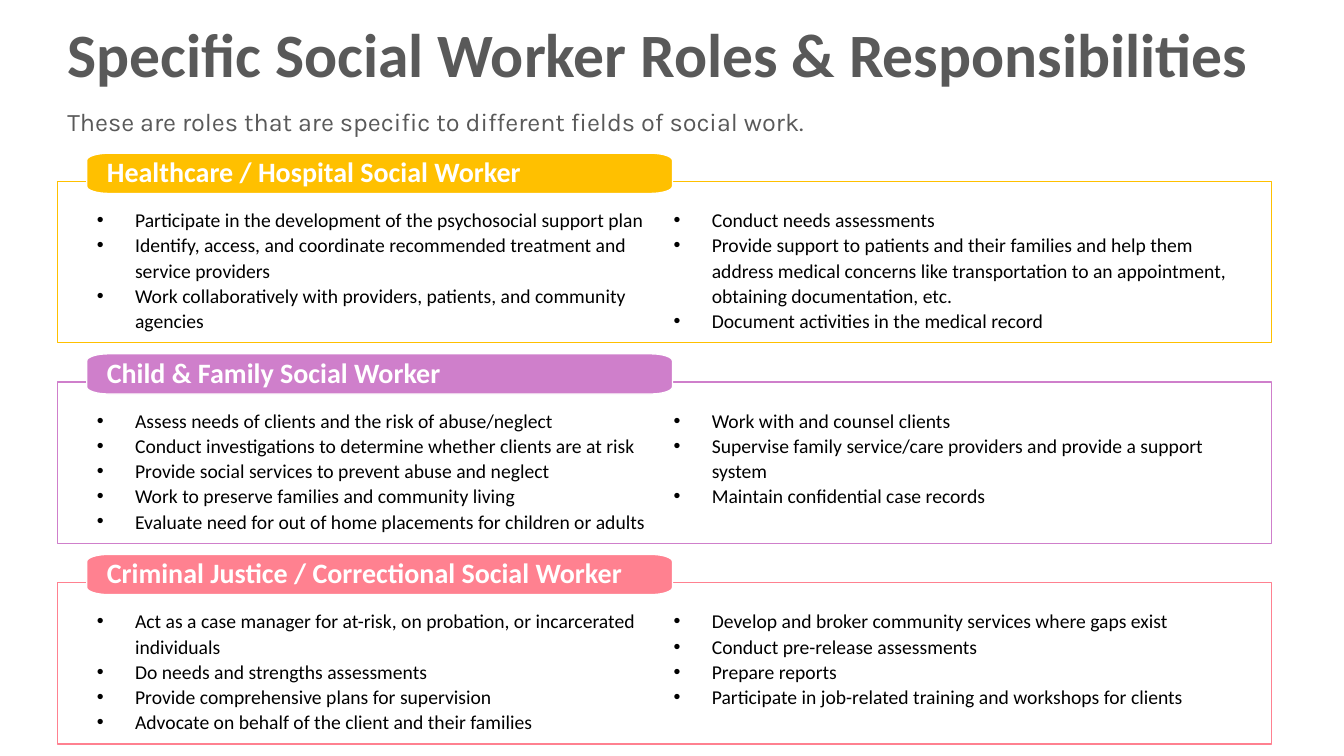
from math import cos, pi, sin

from lxml import etree
from pptx import Presentation
from pptx.dml import color
from pptx.enum import shapes, text
from pptx.oxml import ns
from pptx.util import Inches, Pt

RGB = color.RGBColor
GRAY = RGB(0x59, 0x59, 0x59)
BLACK = RGB(0, 0, 0)
WHITE = RGB(0xFF, 0xFF, 0xFF)
GOLD = RGB(0xFF, 0xC0, 0x00)
PURPLE = RGB(0xCF, 0x7F, 0xCB)
PINK = RGB(0xFF, 0x81, 0x90)

TOP = 1.52
PITCH = 1.99

FIELDS = [
    ("Healthcare / Hospital Social Worker", GOLD, [
        ["Participate in the development of the psychosocial support plan",
         "Identify, access, and coordinate recommended treatment and service providers",
         "Work collaboratively with providers, patients, and community agencies"],
        ["Conduct needs assessments",
         "Provide support to patients and their families and help them address medical "
         "concerns like transportation to an appointment, obtaining documentation, etc.",
         "Document activities in the medical record"],
    ]),
    ("Child & Family Social Worker", PURPLE, [
        ["Assess needs of clients and the risk of abuse/neglect",
         "Conduct investigations to determine whether clients are at risk",
         "Provide social services to prevent abuse and neglect",
         "Work to preserve families and community living",
         "Evaluate need for out of home placements for children or adults"],
        ["Work with and counsel clients",
         "Supervise family service/care providers and provide a support system",
         "Maintain confidential case records"],
    ]),
    ("Criminal Justice / Correctional Social Worker", PINK, [
        ["Act as a case manager for at-risk, on probation, or incarcerated individuals",
         "Do needs and strengths assessments",
         "Provide comprehensive plans for supervision",
         "Advocate on behalf of the client and their families"],
        ["Develop and broker community services where gaps exist",
         "Conduct pre-release assessments",
         "Prepare reports",
         "Participate in job-related training and workshops for clients"],
    ]),
]


def style(para, size, tint, bold=False, face="Calibri", space=1.0):
    para.alignment = text.PP_ALIGN.LEFT
    para.line_spacing = space
    for run in para.runs:
        run.font.name = face
        run.font.size = Pt(size)
        run.font.bold = bold
        run.font.color.rgb = tint


def paint(shape, fill, line):
    shape.shadow.inherit = False
    shape.fill.solid()
    shape.fill.fore_color.rgb = fill
    shape.line.color.rgb = line
    shape.line.width = Pt(1)


def add_box(parent, left, top, width, height, words):
    box = parent.add_textbox(Inches(left), Inches(top), Inches(width), Inches(height))
    box.text_frame.word_wrap = True
    box.text_frame.text = words
    return box.text_frame


def add_frame(parent, top, tint):
    frame = parent.add_shape(shapes.MSO_SHAPE.RECTANGLE, Inches(0.57), Inches(top),
                             Inches(12.04), Inches(1.6))
    paint(frame, WHITE, tint)
    fill = frame.fill._xPr.find(".//" + ns.qn("a:srgbClr"))
    etree.SubElement(fill, ns.qn("a:alpha"), val="90000")


def add_tab(parent, top, title, tint):
    left, width, height, rx, ry, steps = 0.86, 5.81, 0.4, 0.22, 0.07, 8
    right, low = left + width - rx, top + height - ry
    mids = [(left + rx, top + ry), (right, top + ry), (right, low), (left + rx, low)]
    points = []
    for turn, (x, y) in enumerate(mids):
        for step in range(steps + 1):
            angle = pi + (turn + step / steps) * pi / 2
            points.append((Inches(x + rx * cos(angle)), Inches(y + ry * sin(angle))))
    outline = parent.build_freeform(*points[0])
    outline.add_line_segments(points[1:], close=True)
    tab = outline.convert_to_shape()
    paint(tab, tint, WHITE)
    body = tab.text_frame
    body.text = title
    body.word_wrap = True
    body.vertical_anchor = text.MSO_ANCHOR.MIDDLE
    body.margin_left = body.margin_right = Inches(0.2)
    style(body.paragraphs[0], 20, WHITE, bold=True, space=0.9)


def add_list(parent, left, top, items):
    body = add_box(parent, left, top, 5.72, 1.4, "\n".join(items))
    body.margin_left = body.margin_right = 0
    for para in body.paragraphs:
        style(para, 14, BLACK, space=1.07)
        props = para._p.get_or_add_pPr()
        props.set("marL", str(Inches(0.38)))
        props.set("indent", str(Inches(-0.38)))
        etree.SubElement(props, ns.qn("a:buFont"), typeface="Arial")
        etree.SubElement(props, ns.qn("a:buChar"), char="•")


def add_field(slide, top, title, tint, lists):
    group = slide.shapes.add_group_shape().shapes
    add_frame(group, top + 0.28, tint)
    add_tab(group, top, title, tint)
    for col, items in enumerate(lists):
        add_list(group, 0.96 + col * 5.72, top + 0.48, items)


def main():
    deck = Presentation()
    deck.slide_width = Inches(13.33)
    deck.slide_height = Inches(7.5)
    slide = deck.slides.add_slide(deck.slide_layouts[6])

    head = add_box(slide.shapes, 0.57, 0.01, 12.04, 1.12,
                   "Specific Social Worker Roles & Responsibilities")
    head.vertical_anchor = text.MSO_ANCHOR.MIDDLE
    style(head.paragraphs[0], 44, GRAY, bold=True, space=0.9)
    note = add_box(slide.shapes, 0.57, 1.01, 12.36, 0.4,
                   "These are roles that are specific to different fields of social work.")
    style(note.paragraphs[0], 18, GRAY, face="Karla")

    for row, field in enumerate(FIELDS):
        add_field(slide, TOP + row * PITCH, *field)
    deck.save("out.pptx")


if __name__ == "__main__":
    main()
